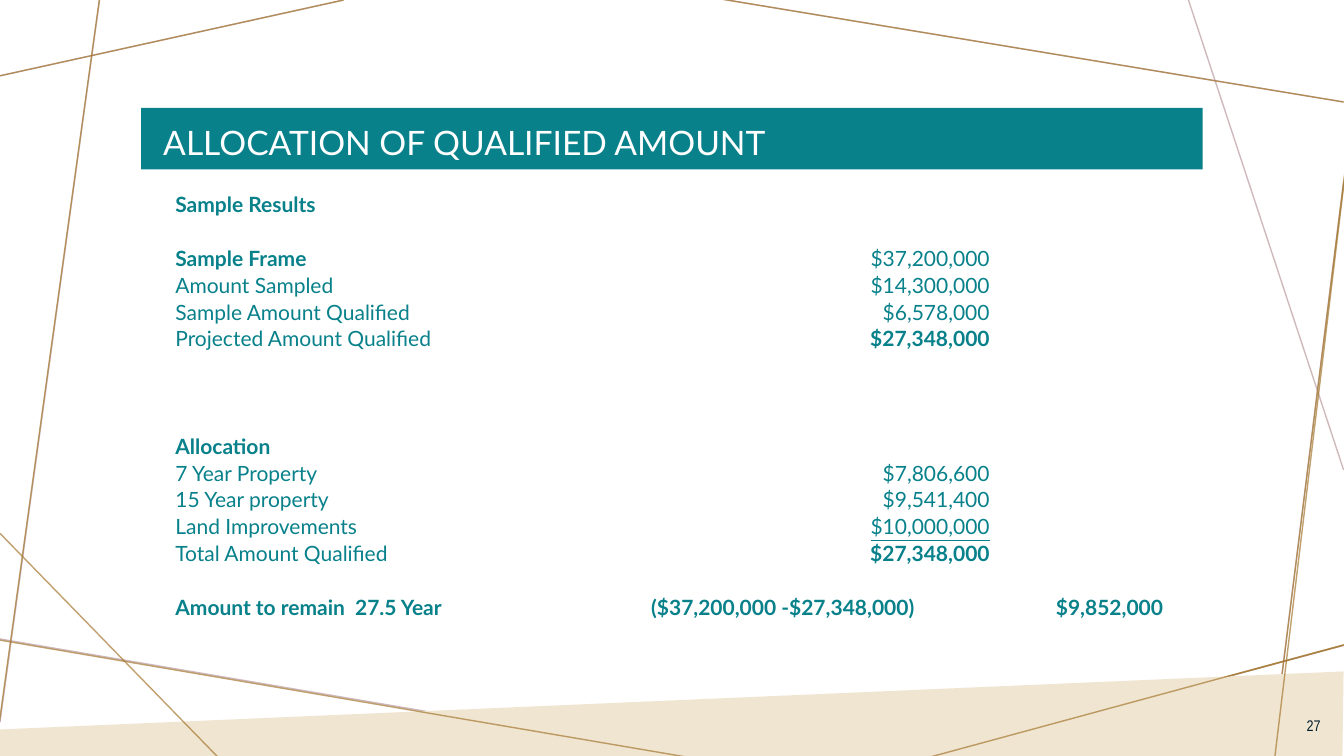
from lxml.etree import SubElement as Sub
from pptx import Presentation
from pptx.dml.color import RGBColor
from pptx.enum.shapes import MSO_CONNECTOR as Link, MSO_SHAPE as Shape
from pptx.enum.text import MSO_ANCHOR as Anchor, MSO_AUTO_SIZE as Auto, PP_ALIGN as Align
from pptx.oxml.ns import qn
from pptx.util import Cm, Pt

TEAL, GOLD, MAUVE, SAND = "08818B", "A57931", "BA9CA0", "F0E5D1"
WHITE, NAVY = "FFFFFF", "001E2E"

# Line ends in cm: x1, y1, x2, y2
SHARED = [
    (8.66, 0, 0, 1.91),
    (33.86, 16.26, 23.52, 19.05),
    (33.86, 2.57, 18.14, -0.03),
]
PALE = SHARED + [
    (2.51, 0, 0, 18.19),
    (17.35, 19.05, -0.13, 16.08),
    (33.86, 4.57, 32.05, 19.05),
    (33.86, 11.84, 29.95, 0),
]
WARM = SHARED + [(33.93, 4.04, 32.03, 19.23)]
FRONT = [
    (0, 13.44, 5.61, 19.2),
    (34.01, 3.45, 32.13, 19.05),
    (-0.1, 18.8, 2.51, -0.05),
    (33.93, 16.23, 23.24, 19.13),
    (17.73, 19.15, 0, 16.13),
]
FLOOR = [(-0.18, 18.39), (33.86, 16.92), (33.83, 19.15), (-0.18, 19.13)]

BOLD, LINED = {"bold": True}, {"underline": True}
# Row number: label, its format, amount, its format
ROWS = {
    0: ("Sample Results", BOLD, "", {}),
    2: ("Sample Frame", BOLD, "$37,200,000", {}),
    3: ("Amount Sampled", {}, "$14,300,000", {}),
    4: ("Sample Amount Qualified", {}, "$6,578,000", {}),
    5: ("Projected Amount Qualified", {}, "$27,348,000", BOLD),
    9: ("Allocation", BOLD, "", {}),
    10: ("7 Year Property", {}, "$7,806,600", {}),
    11: ("15 Year property", {}, "$9,541,400", {}),
    12: ("Land Improvements", {}, "$10,000,000", LINED),
    13: ("Total Amount Qualified", {}, "$27,348,000", BOLD),
    15: ("Amount to remain  27.5 Year", BOLD, "($37,200,000 -$27,348,000)", BOLD),
}
COUNT, LAST = 16, 15
REST = "$9,852,000 "


def rgb(code):
    return RGBColor.from_string(code)


def apply(item, **values):
    for name, value in values.items():
        setattr(item, name, value)


def write(frame, text, color, size, face="Lato", align=Align.LEFT, **look):
    par = frame.paragraphs[0]
    par.alignment = align
    run = par.add_run()
    run.text = text
    run.font.color.rgb = rgb(color)
    apply(run.font, name=face, size=Pt(size), **look)


def paint(shape, color):
    shape.shadow.inherit = False
    shape.fill.solid()
    shape.fill.fore_color.rgb = rgb(color)
    shape.line.fill.background()


def draw(slide, ends, color):
    """Add thin lines at 70 % opacity."""
    for points in ends:
        line = slide.shapes.add_connector(Link.STRAIGHT, *map(Cm, points))
        line.line.color.rgb = rgb(color)
        line.line.width = Pt(1)
        props = line.element.spPr
        tint = next(props.iter(qn("a:srgbClr")))
        Sub(tint, qn("a:alpha"), val="70000")
        Sub(props, qn("a:effectLst"))


def floor(slide):
    start, *rest = [(Cm(x), Cm(y)) for x, y in FLOOR]
    form = slide.shapes.build_freeform(*start)
    form.add_line_segments(rest, close=True)
    paint(form.convert_to_shape(), SAND)


def head(slide):
    title = slide.shapes.title
    title.element.getparent().append(title.element)
    apply(title, left=Cm(3.86), top=Cm(1.47), width=Cm(26.82), height=Cm(2.77))
    frame = title.text_frame
    apply(frame, vertical_anchor=Anchor.BOTTOM, auto_size=Auto.NONE, word_wrap=True)
    write(frame, "ALLOCATION OF QUALIFIED AMOUNT", WHITE, 24)
    frame.paragraphs[0].line_spacing = 0.9


def fill(cell, text, look, align):
    cell.fill.background()
    apply(cell, vertical_anchor=Anchor.BOTTOM, margin_left=Cm(0.03),
          margin_right=Cm(0.03), margin_top=Cm(0.03), margin_bottom=0)
    if text:
        write(cell.text_frame, text, TEAL, 15, align=align,
              **({"bold": False} | look))
    else:
        # A small end mark keeps blank rows from growing
        par = cell.text_frame.paragraphs[0]
        Sub(par.runs[0].font if par.runs else cell.text_frame.paragraphs[0]._p,
            qn("a:endParaRPr"), sz="1000")


def figures(slide):
    table = slide.shapes.add_table(
        COUNT, 3, Cm(4.39), Cm(4.8), Cm(25.08), Cm(10.82)).table
    apply(table, first_row=False, horz_banding=False)
    for column, width in zip(table.columns, (11.99, 8.59, 4.5)):
        column.width = Cm(width)
    for row in range(COUNT):
        label, bold, amount, look = ROWS.get(row, ("", {}, "", {}))
        end = row == LAST
        fill(table.cell(row, 0), label, bold, Align.LEFT)
        fill(table.cell(row, 1), amount, look, Align.LEFT if end else Align.RIGHT)
        fill(table.cell(row, 2), REST if end else "", BOLD, Align.RIGHT)


def number(slide):
    box = slide.shapes.add_textbox(Cm(32.23), Cm(17.78), Cm(1.3), Cm(1.02))
    apply(box.text_frame, word_wrap=True, vertical_anchor=Anchor.MIDDLE)
    write(box.text_frame, "27", NAVY, 11, "Arial Narrow", Align.RIGHT)


def main():
    deck = Presentation()
    apply(deck, slide_width=Cm(33.87), slide_height=Cm(19.05))
    slide = deck.slides.add_slide(deck.slide_layouts[5])
    draw(slide, PALE, MAUVE)
    draw(slide, WARM, GOLD)
    band = slide.shapes.add_shape(
        Shape.RECTANGLE, Cm(3.56), Cm(2.72), Cm(26.75), Cm(1.55))
    paint(band, TEAL)
    floor(slide)
    draw(slide, FRONT, GOLD)
    number(slide)
    figures(slide)
    head(slide)
    deck.save("out.pptx")


if __name__ == "__main__":
    main()
